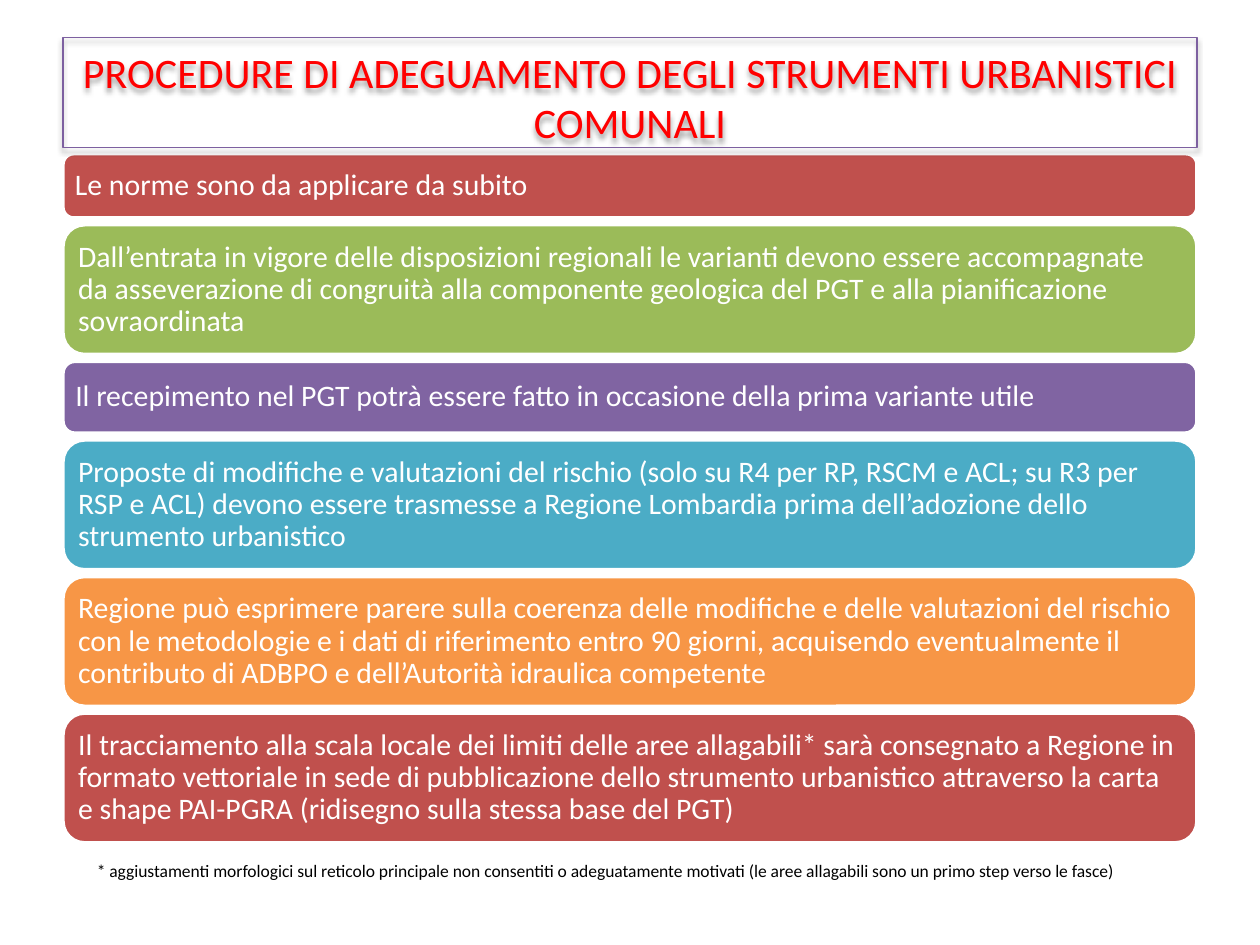
import pptx
import pptx.util
import pptx.dml.color
import pptx.enum.shapes
import pptx.enum.text
from lxml import etree
from pptx.util import Inches

FONT = "Calibri"
LEFT, WIDTH = 0.5, 9
STEPS_TOP, STEPS_BOTTOM = 1.22, 6.69
DRAWING_NS = "http://schemas.openxmlformats.org/drawingml/2006/main"

TITLE = "PROCEDURE DI ADEGUAMENTO DEGLI STRUMENTI URBANISTICI COMUNALI"
FOOTNOTE = (
    "* aggiustamenti morfologici sul reticolo principale non consentiti o adeguatamente "
    "motivati (le aree allagabili sono un primo step verso le fasce)"
)
# Each step: height, fill, text
STEPS = [
    (0.51, "C0504D", "Le norme sono da applicare da subito"),
    (1.03, "9BBB59",
     "Dall’entrata in vigore delle disposizioni regionali le varianti devono essere "
     "accompagnate da asseverazione di congruità alla componente geologica del PGT e "
     "alla pianificazione sovraordinata"),
    (0.57, "8064A2",
     "Il recepimento nel PGT potrà essere fatto in occasione della prima variante utile"),
    (1.03, "4BACC6",
     "Proposte di modifiche e valutazioni del rischio (solo su R4 per RP, RSCM e ACL; "
     "su R3 per RSP e ACL) devono essere trasmesse a Regione Lombardia prima "
     "dell’adozione dello strumento urbanistico"),
    (1.03, "F79646",
     "Regione può esprimere parere sulla coerenza delle modifiche e delle valutazioni "
     "del rischio con le metodologie e i dati di riferimento entro 90 giorni, acquisendo "
     "eventualmente il contributo di ADBPO e dell’Autorità idraulica competente"),
    (1.03, "C0504D",
     "Il tracciamento alla scala locale dei limiti delle aree allagabili* sarà consegnato "
     "a Regione in formato vettoriale in sede di pubblicazione dello strumento urbanistico "
     "attraverso la carta e shape PAI-PGRA (ridisegno sulla stessa base del PGT)"),
]


def color(hex_value):
    return pptx.dml.color.RGBColor.from_string(hex_value)


def set_text(shape, text, size, hex_value, align, anchor):
    frame = shape.text_frame
    frame.word_wrap = True
    frame.vertical_anchor = anchor
    paragraph = frame.paragraphs[0]
    paragraph.text = text
    paragraph.alignment = align
    paragraph.font.name = FONT
    paragraph.font.size = pptx.util.Pt(size)
    paragraph.font.color.rgb = color(hex_value)
    return frame


def add_outlined_shape(slide, kind, top, height, line_color, line_width):
    shape = slide.shapes.add_shape(
        kind, Inches(LEFT), Inches(top), Inches(WIDTH), Inches(height))
    shape.shadow.inherit = False
    shape.line.color.rgb = color(line_color)
    shape.line.width = pptx.util.Pt(line_width)
    return shape


def add_step(slide, top, height, fill, text):
    step = add_outlined_shape(
        slide, pptx.enum.shapes.MSO_SHAPE.ROUNDED_RECTANGLE, top, height, "FFFFFF", 2)
    step.fill.solid()
    step.fill.fore_color.rgb = color(fill)
    frame = set_text(step, text, 17, "FFFFFF", pptx.enum.text.PP_ALIGN.LEFT,
                     pptx.enum.text.MSO_ANCHOR.MIDDLE)
    frame.margin_left = frame.margin_right = Inches(0.07)
    frame.margin_top = frame.margin_bottom = Inches(0.07)
    frame.paragraphs[0].line_spacing = 0.9


def add_drop_shadow(shape):
    effects = shape.element.spPr.find(f"{{{DRAWING_NS}}}effectLst")
    shadow = etree.SubElement(
        effects, f"{{{DRAWING_NS}}}outerShdw", blurRad=str(pptx.util.Pt(3.1)),
        dist=str(pptx.util.Pt(1.6)), dir="5400000", rotWithShape="0")
    black = etree.SubElement(shadow, f"{{{DRAWING_NS}}}srgbClr", val="000000")
    etree.SubElement(black, f"{{{DRAWING_NS}}}alpha", val="38000")


def add_title(slide):
    title = add_outlined_shape(
        slide, pptx.enum.shapes.MSO_SHAPE.RECTANGLE, 0.3, 0.87, "7D60A0", 0.75)
    title.fill.background()
    add_drop_shadow(title)
    frame = set_text(title, TITLE, 24, "FF0000", pptx.enum.text.PP_ALIGN.CENTER,
                     pptx.enum.text.MSO_ANCHOR.TOP)
    frame.margin_top = Inches(0.07)
    frame.margin_bottom = 0


def add_footnote(slide):
    footnote = slide.shapes.add_textbox(
        Inches(0.67), Inches(6.78), Inches(8.83), Inches(0.44))
    set_text(footnote, FOOTNOTE, 10, "000000", pptx.enum.text.PP_ALIGN.LEFT,
             pptx.enum.text.MSO_ANCHOR.TOP)


def main():
    deck = pptx.Presentation()
    deck.slide_width, deck.slide_height = Inches(10), Inches(7.5)
    slide = deck.slides.add_slide(deck.slide_layouts[6])

    # Stack of steps, with equal gaps between the first top and the last bottom
    heights = sum(height for height, _, _ in STEPS)
    gap = (STEPS_BOTTOM - STEPS_TOP - heights) / (len(STEPS) - 1)
    top = STEPS_TOP
    for height, fill, text in STEPS:
        add_step(slide, top, height, fill, text)
        top += height + gap

    # Title and footnote
    add_title(slide)
    add_footnote(slide)
    deck.save("out.pptx")


if __name__ == "__main__":
    main()
